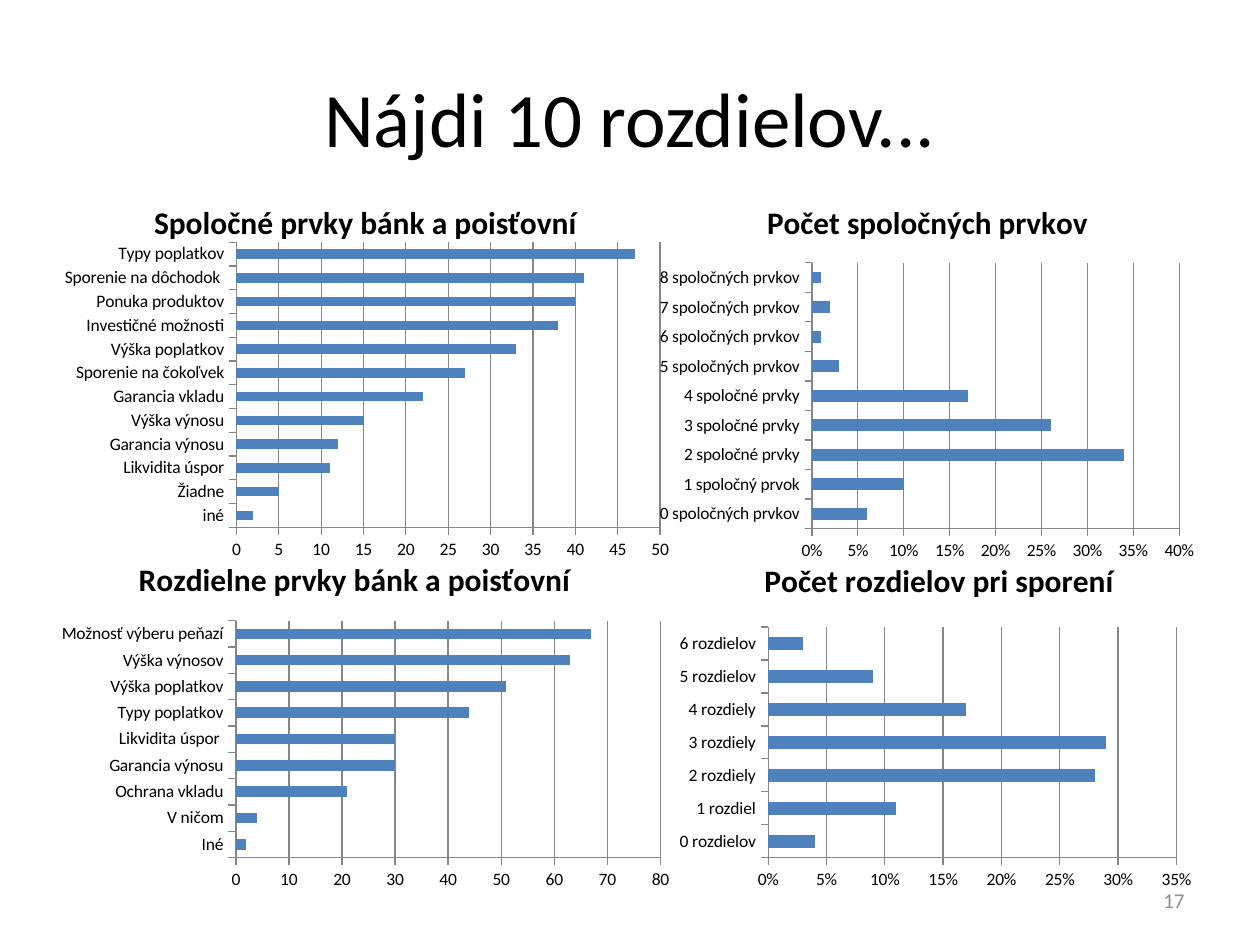
"""Builds the slide with four bar charts on shared and differing features."""
import pptx
import pptx.chart.data
import pptx.dml.color
import pptx.enum.chart
import pptx.enum.text
import pptx.oxml
import pptx.oxml.ns
import pptx.util

Cm, Pt = pptx.util.Cm, pptx.util.Pt
ALIGN = pptx.enum.text.PP_ALIGN
MARK = pptx.enum.chart.XL_TICK_MARK


def paint(text):
    return pptx.dml.color.RGBColor.from_string(text)


def style(item, form):
    for key, value in form.items():
        if key == "color":
            item.color.rgb = paint(value)
        else:
            setattr(item, key, value)


deck = pptx.Presentation()
style(deck, {"slide_width": Cm(25.4), "slide_height": Cm(19.05)})
slide = deck.slides.add_slide(deck.slide_layouts[6])

texts = [
    ("Nájdi 10 rozdielov...", (1.27, 0.76, 22.86, 3.18), ALIGN.CENTER, 44, "000000"),
    ("17", (18.2, 17.65, 5.93, 1.01), ALIGN.RIGHT, 12, "8C8C8C"),
]
for words, place, side, size, shade in texts:
    frame = slide.shapes.add_textbox(*map(Cm, place)).text_frame
    style(frame, {"word_wrap": True, "vertical_anchor": pptx.enum.text.MSO_ANCHOR.MIDDLE})
    line = frame.paragraphs[0]
    style(line, {"text": words, "alignment": side})
    style(line.runs[0].font, {"name": "Calibri", "size": Pt(size), "color": shade})

charts = [
    {
        "title": "Spoločné prvky bánk a\u00a0poisťovní",
        "head": (0.15, 0),
        "place": (1.1, 3.93, 12.6, 7.39),
        "plot": (0.291, 0.129, 0.678, 0.778),
        "axis": (50, 5, "#,##0"),
        "data": {
            "iné": 2, "Žiadne": 5, "Likvidita úspor": 11, "Garancia výnosu": 12,
            "Výška výnosu": 15, "Garancia vkladu": 22, "Sporenie na čokoľvek": 27,
            "Výška poplatkov": 33, "Investičné možnosti": 38, "Ponuka produktov": 40,
            "Sporenie na dôchodok ": 41, "Typy poplatkov": 47,
        },
    },
    {
        "title": "Počet spoločných prvkov",
        "head": (0.18, 0),
        "place": (13.3, 3.93, 10.95, 7.37),
        "plot": (0.274, 0.187, 0.682, 0.732),
        "axis": (0.4, 0.05, "0%"),
        "data": {
            "0 spoločných prvkov": 0.06, "1 spoločný prvok": 0.1,
            "2 spoločné prvky": 0.34, "3 spoločné prvky": 0.26,
            "4 spoločné prvky": 0.17, "5 spoločných prvkov": 0.03,
            "6 spoločných prvkov": 0.01, "7 spoločných prvkov": 0.02,
            "8 spoločných prvkov": 0.01,
        },
    },
    {
        "title": "Rozdielne prvky bánk a poisťovní",
        "head": (0.15, 0.03),
        "place": (0.7, 10.92, 13.21, 7.01),
        "plot": (0.307, 0.229, 0.648, 0.687),
        "axis": (80, 10, "General"),
        "data": {
            "Iné": 2, "V ničom": 4, "Ochrana vkladu": 21, "Garancia výnosu": 30,
            "Likvidita úspor ": 30, "Typy poplatkov": 44, "Výška poplatkov": 51,
            "Výška výnosov": 63, "Možnosť výberu peňazí": 67,
        },
    },
    {
        "title": "Počet rozdielov pri sporení",
        "head": (0.15, 0),
        "place": (13.7, 11.15, 10.59, 6.78),
        "plot": (0.168, 0.223, 0.778, 0.694),
        "axis": (0.35, 0.05, "0%"),
        "data": {
            "0 rozdielov": 0.04, "1 rozdiel": 0.11, "2 rozdiely": 0.28,
            "3 rozdiely": 0.29, "4 rozdiely": 0.17, "5 rozdielov": 0.09,
            "6 rozdielov": 0.03,
        },
    },
]
rule = {"color": "868686", "width": Pt(0.75)}
for part in charts:
    top, step, code = part["axis"]
    data = pptx.chart.data.CategoryChartData(number_format=code)
    data.categories = part["data"].keys()
    data.add_series("Series 1", part["data"].values())
    kind = pptx.enum.chart.XL_CHART_TYPE.BAR_CLUSTERED
    chart = slide.shapes.add_chart(kind, *map(Cm, part["place"]), data).chart
    style(chart, {"has_legend": False, "has_title": True})
    style(chart.font, {"name": "Calibri", "size": Pt(10), "color": "000000"})

    head = chart.chart_title.text_frame.paragraphs[0]
    head.text = part["title"]
    style(head.runs[0].font,
          {"name": "Calibri", "size": Pt(18), "bold": True, "color": "000000"})

    bars = chart.plots[0]
    style(bars, {"gap_width": 150, "vary_by_categories": False})
    fill = bars.series[0].format.fill
    fill.solid()
    fill.fore_color.rgb = paint("4F81BD")

    for axis in (chart.category_axis, chart.value_axis):
        style(axis, {"major_tick_mark": MARK.OUTSIDE, "minor_tick_mark": MARK.NONE})
        style(axis.format.line, rule)
    style(chart.category_axis, {"has_major_gridlines": False})
    style(chart.value_axis, {"minimum_scale": 0, "maximum_scale": top,
                             "major_unit": step, "has_major_gridlines": True})
    style(chart.value_axis.major_gridlines.format.line, rule)
    style(chart.value_axis.tick_labels,
          {"number_format": code, "number_format_is_linked": False})

    root = chart.element
    name = pptx.oxml.ns.qn
    root.find(".//" + name("c:title")).find(name("c:overlay")).set("val", "1")
    for tag, spot, index, aim in (
        ("c:title", part["head"], 1, ""),
        ("c:plotArea", part["plot"], 0, '<c:layoutTarget val="inner"/>'),
    ):
        area = root.find(".//" + name(tag))
        for old in area.findall(name("c:layout")):
            area.remove(old)
        modes = "".join(f'<c:{key}Mode val="edge"/>' for key in "xy")
        sizes = "".join(f'<c:{key} val="{num}"/>' for key, num in zip("xywh", spot))
        area.insert(index, pptx.oxml.parse_xml(
            f'<c:layout {pptx.oxml.ns.nsdecls("c")}><c:manualLayout>'
            f'{aim}{modes}{sizes}</c:manualLayout></c:layout>'))

deck.save("out.pptx")
